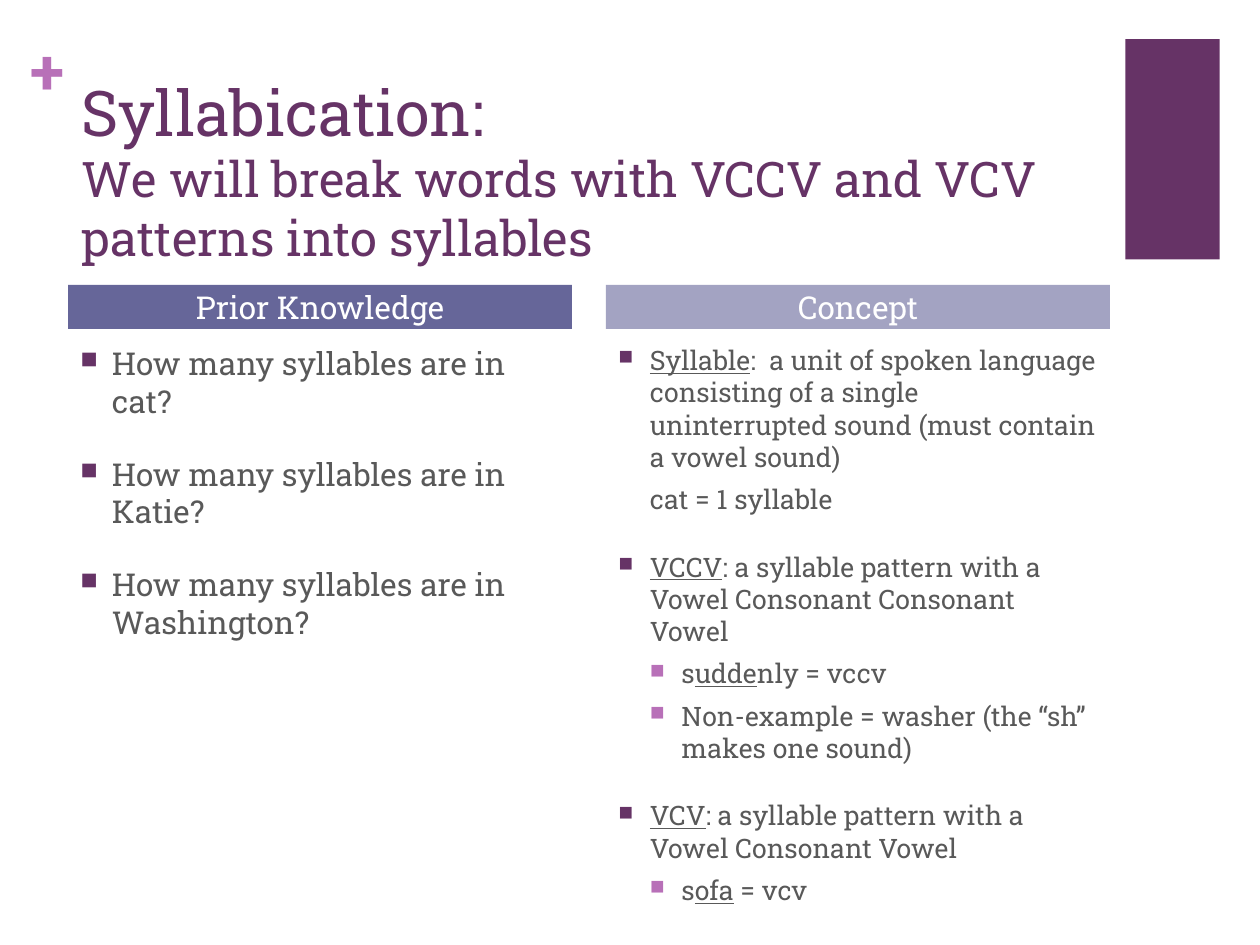
from dataclasses import dataclass

from lxml import etree
from pptx import Presentation
from pptx.dml.color import RGBColor
from pptx.enum.shapes import MSO_SHAPE
from pptx.enum.text import MSO_ANCHOR, MSO_AUTO_SIZE, PP_ALIGN
from pptx.oxml.ns import qn
from pptx.slide import Slide
from pptx.util import Pt

RECTANGLE = MSO_SHAPE.RECTANGLE
TOP, MIDDLE = MSO_ANCHOR.TOP, MSO_ANCHOR.MIDDLE
LEFT, CENTER = PP_ALIGN.LEFT, PP_ALIGN.CENTER
NO_AUTOFIT = MSO_AUTO_SIZE.NONE

PLUM = RGBColor(0x66, 0x33, 0x66)
ORCHID = RGBColor(0xB8, 0x70, 0xB8)
INDIGO = RGBColor(0x66, 0x66, 0x99)
LAVENDER = RGBColor(0xA3, 0xA3, 0xC2)
GRAY = RGBColor(0x59, 0x59, 0x59)
WHITE = RGBColor(0xFF, 0xFF, 0xFF)

FONT = "Roboto Slab"
COLUMN_WIDTH = 288
HEADING_TOP, HEADING_HEIGHT = 162.8, 25.2
BODY_TOP, BODY_HEIGHT = 193, 289.4
INDENT = 18


@dataclass(frozen=True)
class Point:
    """One paragraph; the underlined part stands between lead and rest."""
    lead: str = ""
    underlined: str = ""
    rest: str = ""
    level: int = 0
    bulleted: bool = True


@dataclass(frozen=True)
class Column:
    heading: str
    left: float
    fill: RGBColor
    size: float
    points: tuple[Point, ...]


COLUMNS = (
    Column("Prior Knowledge", 38.9, INDIGO, 18, tuple(
        Point(f"How many syllables are in {word}?")
        for word in ("cat", "Katie", "Washington"))),
    Column("Concept", 346.3, LAVENDER, 15.3, (
        Point(underlined="Syllable",
              rest=":  a unit of spoken language consisting of a single "
                   "uninterrupted sound (must contain a vowel sound)"),
        Point("cat = 1 syllable", level=1, bulleted=False),
        Point(underlined="VCCV",
              rest=": a syllable pattern with a Vowel Consonant Consonant Vowel"),
        Point("s", "udde", "nly = vccv", level=1),
        Point("Non-example = washer (the “sh” makes one sound)", level=1),
        Point(underlined="VCV",
              rest=": a syllable pattern with a Vowel Consonant Vowel"),
        Point("s", "ofa", " = vcv", level=1),
    )),
)


def add_text(paragraph, text: str, *, size: float, color: RGBColor,
             bold: bool = False, underline: bool = False) -> None:
    run = paragraph.add_run()
    run.text = text
    font = run.font
    font.name, font.size, font.bold = FONT, Pt(size), bold
    font.underline = underline
    font.color.rgb = color


def add_block(slide: Slide, left: float, top: float, width: float,
              height: float, fill: RGBColor):
    block = slide.shapes.add_shape(
        RECTANGLE, Pt(left), Pt(top), Pt(width), Pt(height))
    block.shadow.inherit = False
    block.fill.solid()
    block.fill.fore_color.rgb = fill
    block.line.fill.background()
    return block


def set_indent_and_bullet(paragraph, point: Point) -> None:
    properties = paragraph._p.get_or_add_pPr()
    properties.set("marL", str(Pt(INDENT * (point.level + 1))))
    properties.set("indent", str(-Pt(INDENT)))
    if not point.bulleted:
        return
    color = etree.SubElement(properties, qn("a:buClr"))
    etree.SubElement(color, qn("a:srgbClr"),
                     val=str(ORCHID if point.level else PLUM))
    etree.SubElement(properties, qn("a:buSzPct"), val="75000")
    etree.SubElement(properties, qn("a:buChar"), char="■")


def add_column(slide: Slide, column: Column) -> None:
    body = slide.shapes.add_textbox(
        Pt(column.left), Pt(BODY_TOP), Pt(COLUMN_WIDTH), Pt(BODY_HEIGHT))
    frame = body.text_frame
    frame.word_wrap = True
    for index, point in enumerate(column.points):
        paragraph = frame.add_paragraph() if index else frame.paragraphs[0]
        paragraph.level = point.level
        paragraph.space_before = Pt(6 if point.level else 20)
        set_indent_and_bullet(paragraph, point)
        for text in (point.lead, point.underlined, point.rest):
            if text:
                add_text(paragraph, text, size=column.size, color=GRAY,
                         underline=text == point.underlined)

    heading = add_block(slide, column.left, HEADING_TOP, COLUMN_WIDTH,
                        HEADING_HEIGHT, column.fill)
    frame = heading.text_frame
    frame.margin_top = frame.margin_bottom = 0
    frame.vertical_anchor = MIDDLE
    frame.paragraphs[0].alignment = CENTER
    add_text(frame.paragraphs[0], column.heading, size=18, color=WHITE)


def add_plus_sign(slide: Slide) -> None:
    plus = slide.shapes.add_textbox(Pt(17.3), Pt(18), Pt(20.9), Pt(43.9))
    frame = plus.text_frame
    frame.margin_left = frame.margin_right = 0
    frame.margin_top = frame.margin_bottom = 0
    frame.word_wrap = True
    add_text(frame.paragraphs[0], "+", size=36, color=ORCHID, bold=True)


def format_title(slide: Slide) -> None:
    title = slide.shapes.title
    title.left, title.top = Pt(39.6), Pt(38.2)
    title.width, title.height = Pt(594.7), Pt(87.8)
    frame = title.text_frame
    frame.word_wrap = True
    frame.auto_size = NO_AUTOFIT
    frame.vertical_anchor = TOP
    paragraph = frame.paragraphs[0]
    paragraph.alignment = LEFT
    add_text(paragraph, "Syllabication:", size=36, color=PLUM)
    paragraph.add_line_break()
    add_text(paragraph,
             "We will break words with VCCV and VCV patterns into syllables",
             size=28, color=PLUM)


def main() -> None:
    presentation = Presentation()
    presentation.slide_width, presentation.slide_height = Pt(720), Pt(540)
    slide = presentation.slides.add_slide(presentation.slide_layouts[5])
    add_block(slide, 643, 22.3, 54, 126, PLUM)
    add_plus_sign(slide)
    format_title(slide)
    for column in COLUMNS:
        add_column(slide, column)
    presentation.save("out.pptx")


if __name__ == "__main__":
    main()
